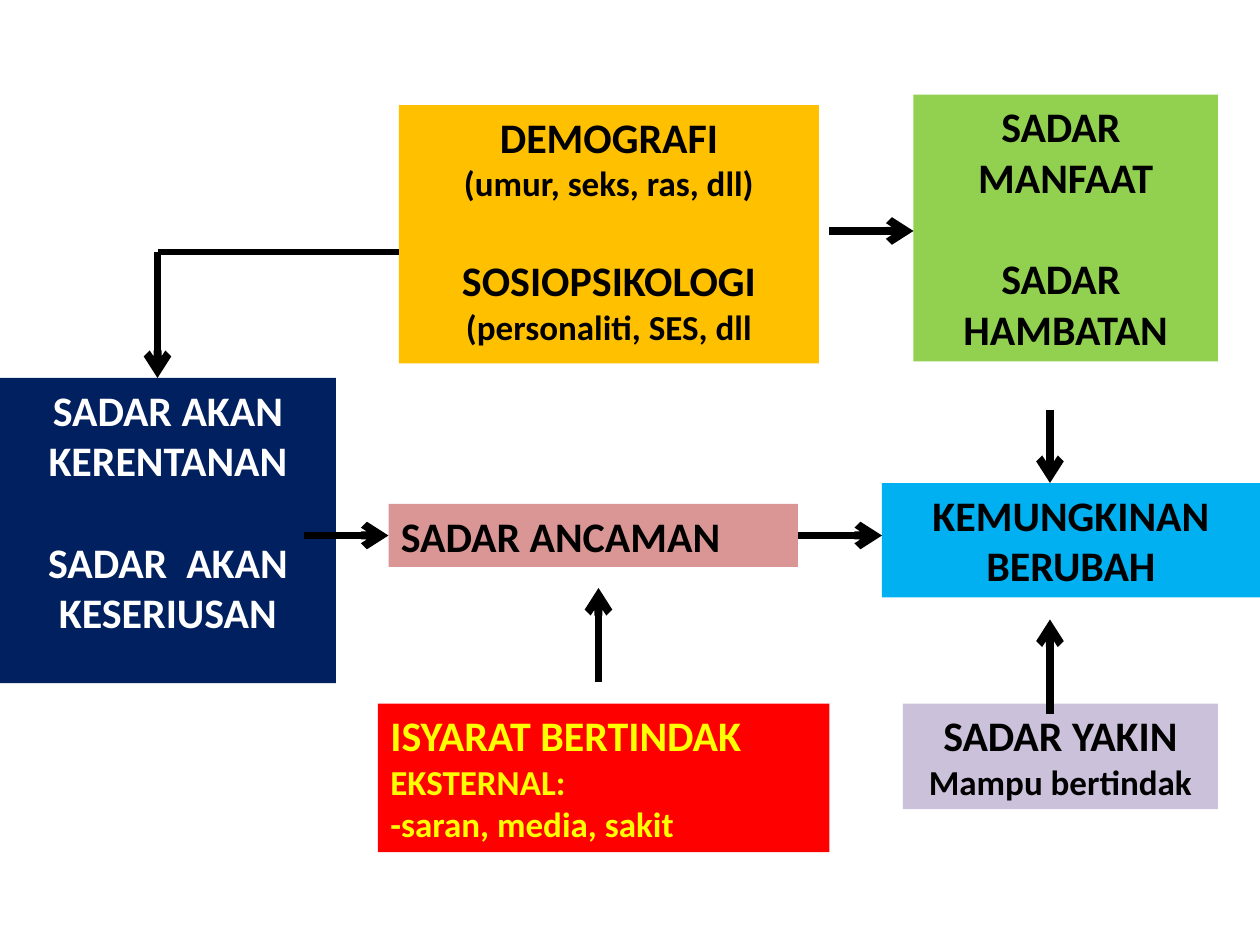
from pptx import Presentation
from pptx.dml.color import RGBColor as RGB
from pptx.enum.shapes import MSO_CONNECTOR as LINE
from pptx.enum.text import MSO_ANCHOR as ANCHOR, PP_ALIGN as ALIGN
from pptx.oxml.ns import qn
from pptx.util import Pt
from lxml.etree import SubElement as Sub

BLACK = RGB(0x00, 0x00, 0x00)
WHITE = RGB(0xFF, 0xFF, 0xFF)
YELLOW = RGB(0xFF, 0xFF, 0x00)
AMBER = RGB(0xFF, 0xC0, 0x00)
GREEN = RGB(0x92, 0xD0, 0x50)
ROSE = RGB(0xD9, 0x96, 0x94)
CYAN = RGB(0x00, 0xB0, 0xF0)
NAVY = RGB(0x00, 0x20, 0x60)
RED = RGB(0xFF, 0x00, 0x00)
LILAC = RGB(0xCC, 0xC1, 0xDA)

BIG, SMALL = 24, 20
GAP = 29.3  # one line of big text


class Chart:
    """Draws the boxes and arrows of the model on one slide."""
    font = "Calibri"

    def __init__(self, slide):
        self.slide = slide

    def box(self, place, fill, lines, color=BLACK, align=ALIGN.CENTER):
        """Each line is (text, size) or (text, size, space before)."""
        shape = self.slide.shapes.add_textbox(*map(Pt, place))
        shape.fill.solid()
        shape.fill.fore_color.rgb = fill
        frame = shape.text_frame
        frame.word_wrap = True
        frame.vertical_anchor = ANCHOR.TOP
        frame.text = "\n".join(line[0] for line in lines)
        for para, (_, size, *gap) in zip(frame.paragraphs, lines):
            para.alignment = align
            if gap:
                para.space_before = Pt(gap[0])
            for run in para.runs:
                font = run.font
                font.name, font.size, font.bold = self.font, Pt(size), True
                font.color.rgb = color

    def line(self, start, end, width=4.5, arrow=True):
        link = self.slide.shapes.add_connector(
            LINE.STRAIGHT, *map(Pt, start + end))
        link.line.color.rgb = BLACK
        link.line.width = Pt(width)
        props = link._element.spPr
        if arrow:
            Sub(props.find(qn("a:ln")), qn("a:tailEnd"), type="arrow")
        Sub(props, qn("a:effectLst"))


def main():
    deck = Presentation()
    deck.slide_width, deck.slide_height = Pt(720), Pt(540)
    chart = Chart(deck.slides.add_slide(deck.slide_layouts[6]))

    # Background factors and perceptions
    chart.box((228, 60, 240, 147.6), AMBER, [
        ("DEMOGRAFI", BIG), ("(umur, seks, ras, dll)", SMALL),
        ("SOSIOPSIKOLOGI", BIG, GAP), ("(personaliti, SES, dll", SMALL)])
    chart.box((522, 54, 174, 152.6), GREEN, [
        ("SADAR ", BIG), ("MANFAAT", BIG),
        ("SADAR ", BIG, GAP), ("HAMBATAN", BIG)])
    chart.box((0, 216, 192, 174.4), NAVY, [
        ("SADAR AKAN KERENTANAN", BIG),
        ("SADAR  AKAN KESERIUSAN", BIG, GAP)], WHITE)

    # Threat and likelihood of change
    chart.box((222, 288, 234, 36), ROSE, [("SADAR ANCAMAN", BIG)],
              align=ALIGN.LEFT)
    chart.box((504, 276, 216, 65.4), CYAN, [("KEMUNGKINAN BERUBAH", BIG)])

    # Cues to action and self-belief
    chart.box((216, 402, 258, 85), RED, [
        ("ISYARAT BERTINDAK", BIG), ("EKSTERNAL:", SMALL),
        ("-saran, media, sakit", SMALL)], YELLOW, ALIGN.LEFT)
    chart.box((516, 402, 180, 60.4), LILAC, [
        ("SADAR YAKIN", BIG), ("Mampu bertindak", SMALL)])

    # Arrows between the boxes
    for start, end in [
            ((474, 132), (522, 132)), ((600, 234), (600, 276)),
            ((456, 306), (504, 306)), ((174, 306), (222, 306)),
            ((90, 144), (90, 216)), ((342, 390), (342, 336)),
            ((600, 408), (600, 354))]:
        chart.line(start, end)
    chart.line((228, 144), (90, 144), width=3, arrow=False)

    deck.save("out.pptx")


if __name__ == "__main__":
    main()
